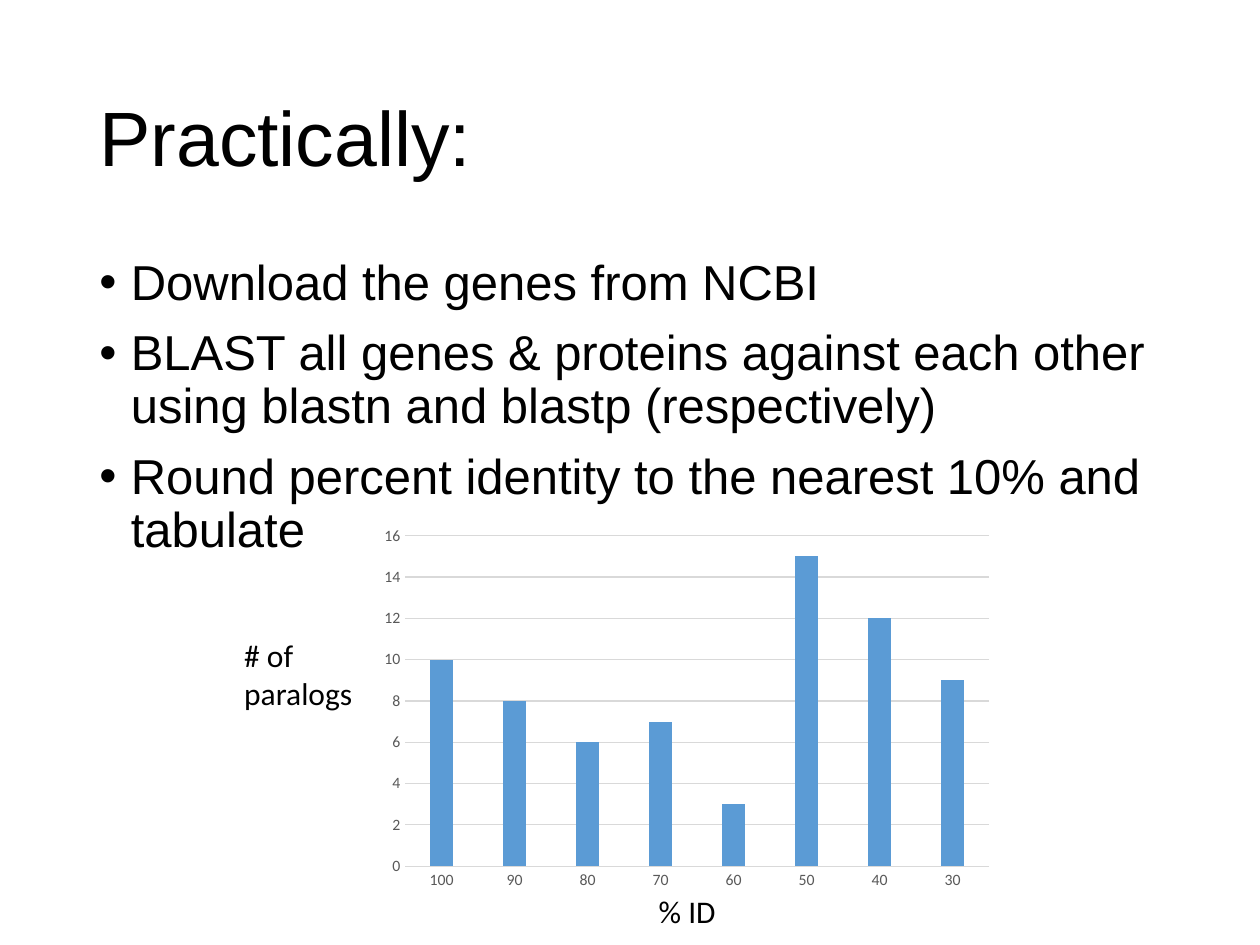
from dataclasses import dataclass

from lxml import etree
from pptx import Presentation
from pptx.chart.data import CategoryChartData
from pptx.dml.color import RGBColor
from pptx.enum.chart import XL_CHART_TYPE, XL_TICK_MARK
from pptx.enum.text import MSO_ANCHOR, MSO_AUTO_SIZE
from pptx.oxml.ns import qn
from pptx.util import Inches, Pt

COLUMNS = XL_CHART_TYPE.COLUMN_CLUSTERED
NO_TICK = XL_TICK_MARK.NONE
MIDDLE, TOP = MSO_ANCHOR.MIDDLE, MSO_ANCHOR.TOP
FIT_SHAPE = MSO_AUTO_SIZE.SHAPE_TO_FIT_TEXT


@dataclass(frozen=True)
class Theme:
    ink: RGBColor = RGBColor(0, 0, 0)
    axis_ink: RGBColor = RGBColor(0x59, 0x59, 0x59)
    rule: RGBColor = RGBColor(0xD9, 0xD9, 0xD9)
    bar: RGBColor = RGBColor(0x5B, 0x9B, 0xD5)
    text_font: str = "Arial"
    chart_font: str = "Calibri"
    title_size: Pt = Pt(44)
    body_size: Pt = Pt(28)
    label_size: Pt = Pt(18)
    axis_size: Pt = Pt(9)
    rule_width: Pt = Pt(0.75)


THEME = Theme()

STEPS = [
    "Download the genes from NCBI",
    "BLAST all genes & proteins against each other using blastn and blastp (respectively)",
    "Round percent identity to the nearest 10% and tabulate",
]
PARALOGS = {100: 10, 90: 8, 80: 6, 70: 7, 60: 3, 50: 15, 40: 12, 30: 9}


def apply(target, formats):
    for name, value in formats.items():
        setattr(target, name, value)


def set_font(font, name, size, color):
    apply(font, {"name": name, "size": size})
    font.color.rgb = color


def add_text(page, box, lines, font_name, size, frame_format, para_format):
    frame = page.shapes.add_textbox(*box).text_frame
    apply(frame, frame_format)
    for index, line in enumerate(lines):
        para = frame.add_paragraph() if index else frame.paragraphs[0]
        apply(para, para_format)
        span = para.add_run()
        span.text = line
        set_font(span.font, font_name, size, THEME.ink)
    return frame


def add_title(page, box):
    add_text(page, box, ["Practically:"], THEME.text_font, THEME.title_size,
             {"word_wrap": True, "vertical_anchor": MIDDLE}, {"line_spacing": 0.9})


def add_steps(page, box):
    frame = add_text(page, box, STEPS, THEME.text_font, THEME.body_size,
                     {"word_wrap": True, "vertical_anchor": TOP},
                     {"line_spacing": 0.9, "space_before": Pt(10)})
    indent = Inches(0.25)
    for para in frame.paragraphs:
        properties = para._p.get_or_add_pPr()
        properties.set("marL", str(indent))
        properties.set("indent", str(-indent))
        etree.SubElement(properties, qn("a:buFont")).set("typeface", THEME.text_font)
        etree.SubElement(properties, qn("a:buChar")).set("char", "•")


def add_label(page, box, lines):
    add_text(page, box, lines, THEME.chart_font, THEME.label_size,
             {"word_wrap": False, "auto_size": FIT_SHAPE}, {})


def draw_rule(line):
    line.color.rgb = THEME.rule
    line.width = THEME.rule_width


def add_paralog_chart(page, box):
    data = CategoryChartData()
    data.categories = [str(identity) for identity in PARALOGS]
    data.add_series("Series 1", list(PARALOGS.values()))
    chart = page.shapes.add_chart(COLUMNS, *box, data).chart
    apply(chart, {"has_legend": False, "has_title": False})
    set_font(chart.font, THEME.chart_font, Pt(10), THEME.ink)

    plot = chart.plots[0]
    apply(plot, {"gap_width": 219, "overlap": -27, "vary_by_categories": False})
    fill = plot.series[0].format.fill
    fill.solid()
    fill.fore_color.rgb = THEME.bar

    for axis in (chart.category_axis, chart.value_axis):
        apply(axis, {"major_tick_mark": NO_TICK, "minor_tick_mark": NO_TICK})
        set_font(axis.tick_labels.font, THEME.chart_font, THEME.axis_size, THEME.axis_ink)
    draw_rule(chart.category_axis.format.line)
    apply(chart.value_axis, {"minimum_scale": 0, "maximum_scale": 16, "major_unit": 2})
    chart.value_axis.format.line.fill.background()
    draw_rule(chart.value_axis.major_gridlines.format.line)


def main():
    deck = Presentation()
    apply(deck, {"slide_width": Inches(10), "slide_height": Inches(7.5)})
    page = deck.slides.add_slide(deck.slide_layouts[6])

    def share(left, top, width, height):
        return (int(deck.slide_width * left), int(deck.slide_height * top),
                int(deck.slide_width * width), int(deck.slide_height * height))

    add_title(page, share(0.069, 0.4 / 7.5, 0.862, 1.45 / 7.5))
    add_steps(page, share(0.069, 2 / 7.5, 0.862, 4.76 / 7.5))
    add_paralog_chart(page, share(0.295, 4.12 / 7.5, 0.5, 0.4))
    add_label(page, share(0.513, 7.03 / 7.5, 0.066, 0.4 / 7.5), ["% ID"])
    add_label(page, share(0.184, 5 / 7.5, 0.107, 0.71 / 7.5), ["# of", "paralogs"])
    deck.save("out.pptx")


if __name__ == "__main__":
    main()
